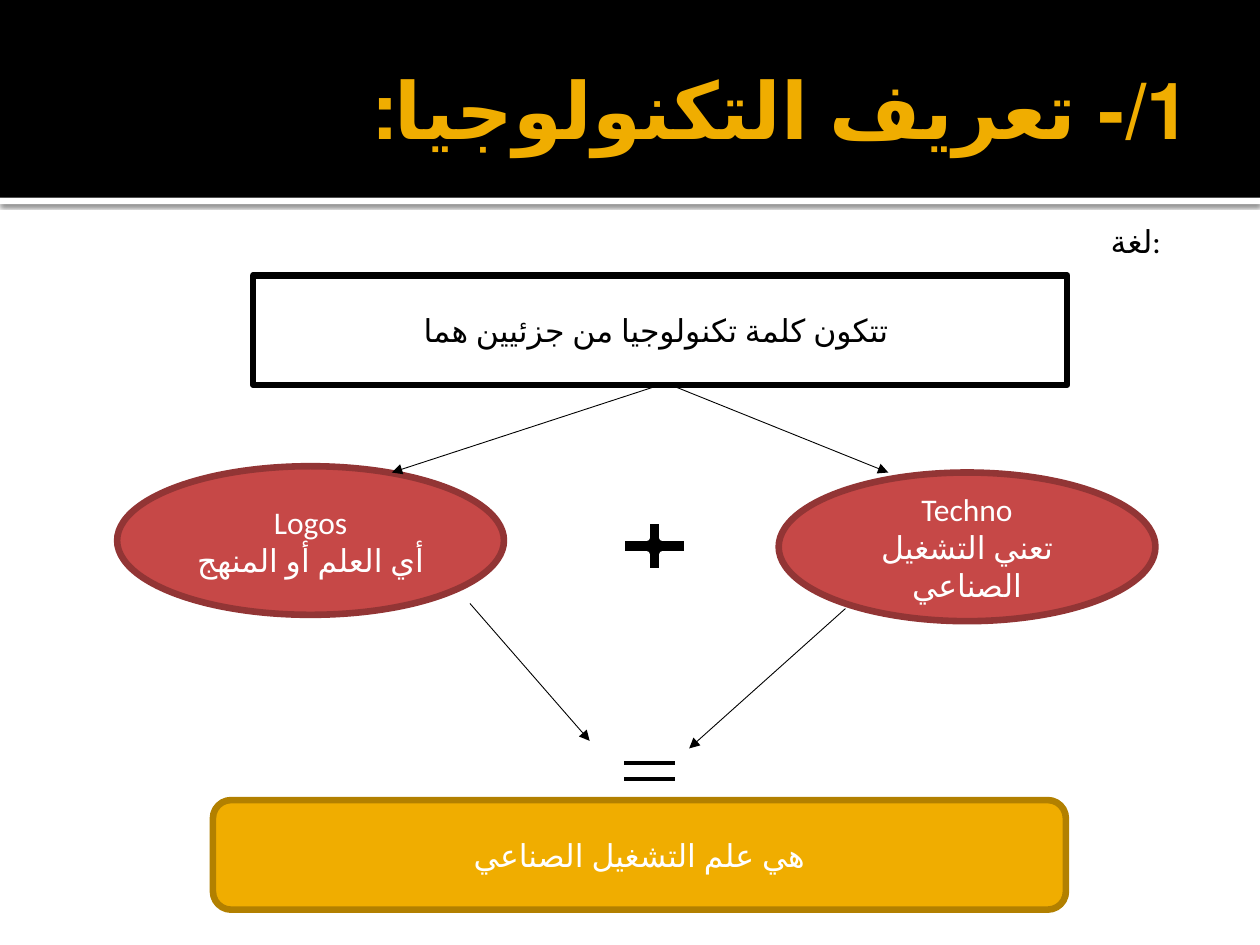
import pptx
import pptx.util
import pptx.dml.color
import pptx.enum.lang
import pptx.enum.shapes
import pptx.enum.text
import pptx.oxml
import pptx.oxml.ns

KIND = pptx.enum.shapes.MSO_SHAPE
ALIGN = pptx.enum.text.PP_ALIGN
ARABIC = pptx.enum.lang.MSO_LANGUAGE_ID.ARABIC_ALGERIA
NS = pptx.oxml.ns.nsdecls("a")
COLS, ROWS = 100, 75  # grid over the slide


def color(code):
    return pptx.dml.color.RGBColor.from_string(code)


def write(frame, text, size=18, ink="FFFFFF", bold=False,
          align=ALIGN.CENTER, rtl=False, font="Calibri"):
    """Fill a text frame, one paragraph per line of text."""
    frame.word_wrap = True
    frame.auto_size = pptx.enum.text.MSO_AUTO_SIZE.NONE
    frame.vertical_anchor = pptx.enum.text.MSO_ANCHOR.MIDDLE
    frame.text = text
    for para in frame.paragraphs:
        para.alignment = align
        if rtl:
            para._p.get_or_add_pPr().set("rtl", "1")
        for run in para.runs:
            run.font.name = font
            run.font.language_id = ARABIC
            run.font.size = pptx.util.Pt(size)
            run.font.bold = bold
            run.font.color.rgb = color(ink)


class Board:
    """Holds the style and the current slide."""
    black, white = "000000", "FFFFFF"
    gold, brown = "F0AD00", "B28000"
    red, dark = "C64847", "923535"
    thick, thin = 3.78, 0.5

    def __init__(self):
        self.deck = pptx.Presentation()
        self.deck.slide_width = pptx.util.Inches(10)
        self.deck.slide_height = pptx.util.Inches(7.5)
        self.slide = self.deck.slides.add_slide(self.deck.slide_layouts[5])

    def place(self, *spots):
        """Turn grid columns and rows, in turn, into lengths."""
        units = (self.deck.slide_width / COLS, self.deck.slide_height / ROWS)
        return [round(spot * units[i % 2]) for i, spot in enumerate(spots)]

    def shape(self, kind, spot, fill, line=None, text=None, **style):
        item = self.slide.shapes.add_shape(kind, *self.place(*spot))
        item.shadow.inherit = False
        item.fill.solid()
        item.fill.fore_color.rgb = color(fill)
        if line:
            item.line.color.rgb = color(line)
            item.line.width = pptx.util.Pt(self.thick)
        else:
            item.line.fill.background()
        if text:
            write(item.text_frame, text, **style)
        return item

    def shade(self, item):
        """Drop a soft shadow straight down."""
        effects = item.element.spPr.find(pptx.oxml.ns.qn("a:effectLst"))
        effects.append(pptx.oxml.parse_xml(
            f'<a:outerShdw {NS} blurRad="31750" dist="10160" dir="5400000" '
            'algn="tl" rotWithShape="0"><a:srgbClr val="000000">'
            '<a:alpha val="60000"/></a:srgbClr></a:outerShdw>'))

    def title(self, text, spot):
        item = self.slide.shapes.title
        item.left, item.top, item.width, item.height = self.place(*spot)
        frame = item.text_frame
        frame.margin_left = pptx.util.Inches(0.1)
        frame.margin_right = pptx.util.Inches(0.05)
        write(frame, text, size=45, ink=self.gold, bold=True,
              align=ALIGN.RIGHT, rtl=True)
        self.slide.shapes.element.append(item.element)  # above the band

    def arrow(self, start, end, source=None):
        item = self.slide.shapes.add_connector(
            pptx.enum.shapes.MSO_CONNECTOR.STRAIGHT, *self.place(*start, *end))
        if source:
            item.begin_connect(source, 2)
        item.line.color.rgb = color(self.black)
        item.line.width = pptx.util.Pt(self.thin)
        item.line._get_or_add_ln().append(
            pptx.oxml.parse_xml(f'<a:tailEnd {NS} type="triangle"/>'))
        item.element.spPr.append(pptx.oxml.parse_xml(f"<a:effectLst {NS}/>"))


def main():
    board = Board()

    # Header band and title
    rule = board.shape(KIND.RECTANGLE, (0, 15.7, COLS, 0.5), board.white)
    board.shade(rule)
    board.shape(KIND.RECTANGLE, (0, 0, COLS, 15.7), board.black)
    board.title("1/-\u00a0تعريف التكنولوجيا:", (5, 1.7, 90, 13.7))

    # The word, its two parts and the result
    word = board.shape(KIND.RECTANGLE, (20.1, 21.85, 64.6, 8.7), board.white,
                       board.black, "تتكون كلمة تكنولوجيا من جزئيين هما ",
                       ink=board.black)
    parts = [((61.8, 37.5, 29.9, 11.8), "Techno\nتعني التشغيل الصناعي"),
             ((9.3, 37, 30.7, 11.8), "Logos\nأي العلم أو المنهج")]
    for spot, text in parts:
        board.shape(KIND.OVAL, spot, board.red, board.dark, text)
    board.shape(KIND.ROUNDED_RECTANGLE, (16.9, 63.5, 67.7, 8.7), board.gold,
                board.brown, "هي علم التشغيل الصناعي")

    # Arrows
    board.arrow((52.4, 30.6), (31.1, 37.5), word)
    for start, end in [((53.1, 30.5), (70.5, 37.5)),
                       ((37.3, 47.9), (46.8, 58.8)),
                       ((67.1, 48.3), (54.7, 59.4))]:
        board.arrow(start, end)

    # Label and signs
    board.shape(KIND.RECTANGLE, (82.3, 17.2, 15.7, 3.9), board.white,
                text="لغة:", ink=board.black)
    for kind, spot in [(KIND.MATH_PLUS, (48.4, 40.6, 7.1, 5.5)),
                       (KIND.MATH_EQUAL, (48.4, 59.4, 6.3, 3.6))]:
        board.shape(kind, spot, board.black, board.white)

    board.deck.save("out.pptx")


if __name__ == "__main__":
    main()
